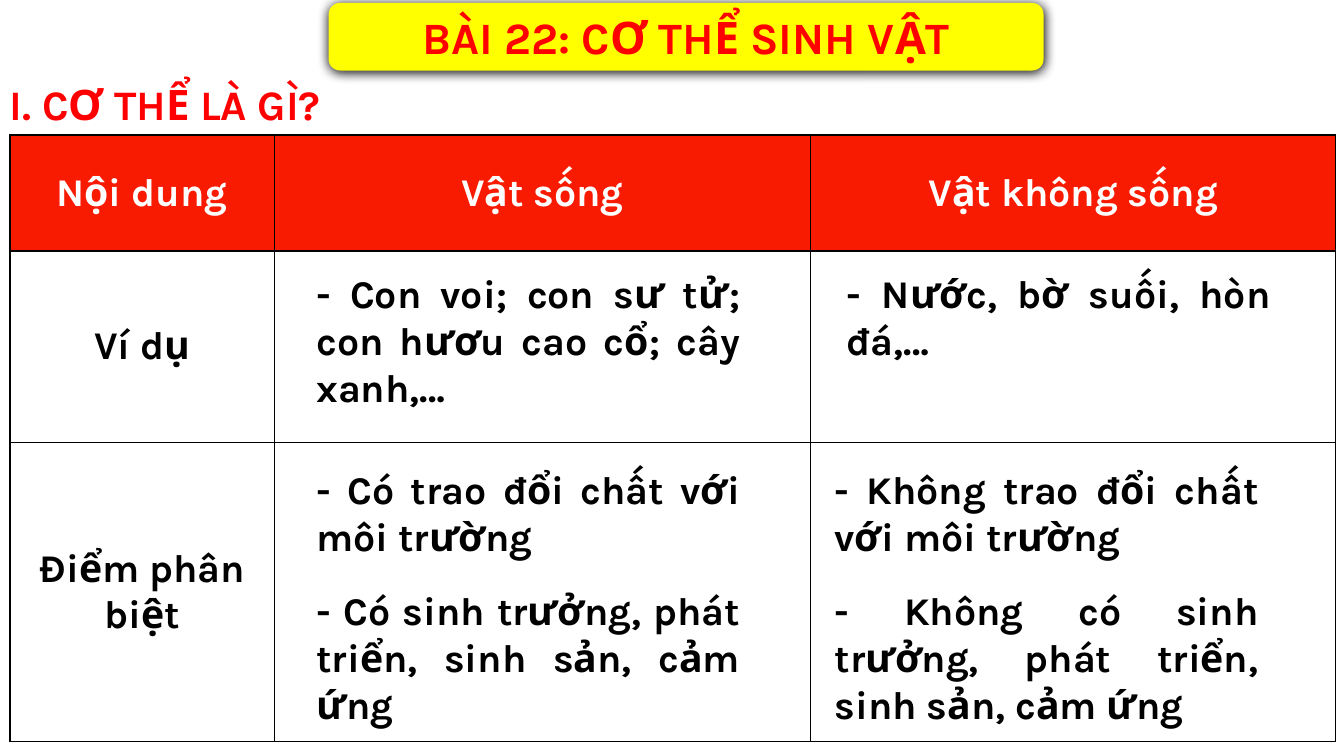
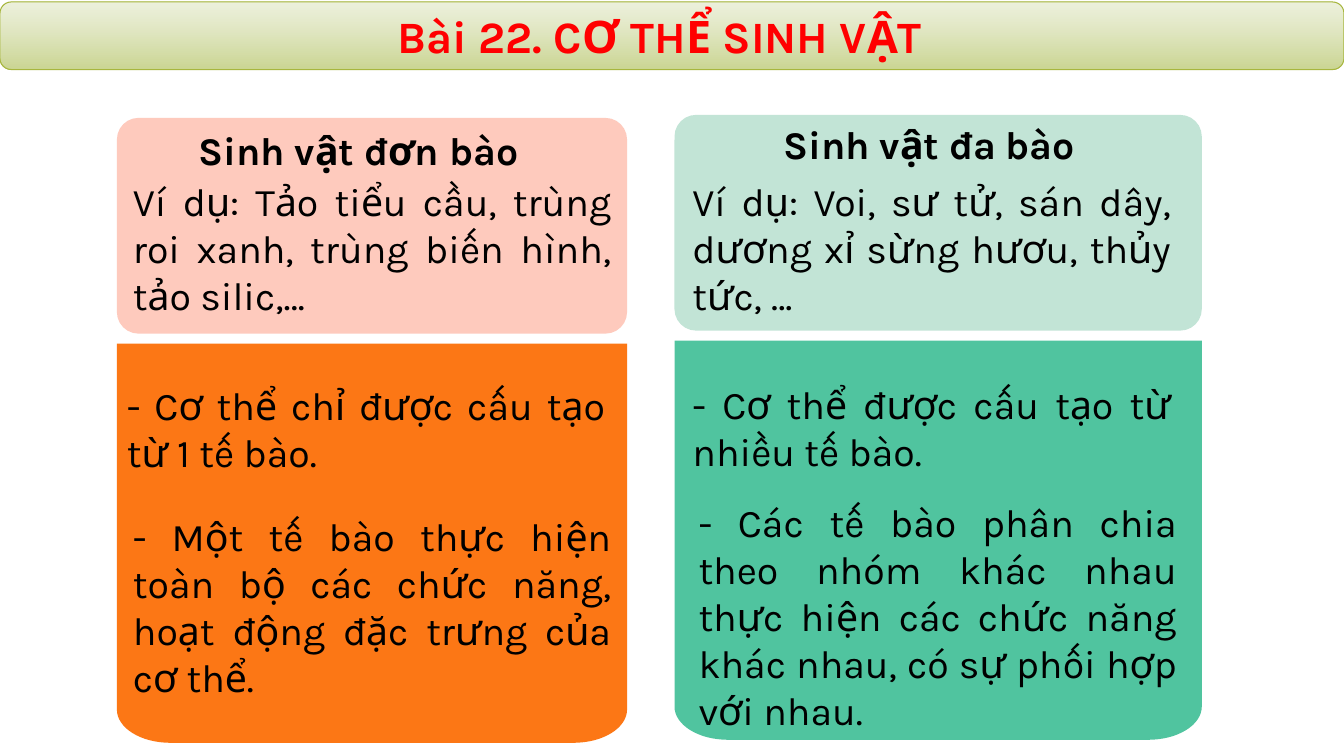
import math
from dataclasses import dataclass

from lxml import etree
from pptx import Presentation
from pptx import util as u
from pptx.dml.color import RGBColor
from pptx.enum import shapes, text
from pptx.oxml.ns import qn


@dataclass(frozen=True)
class Theme:
    font: str = "Karla"
    title_size: int = 32
    heading_size: int = 30
    body_size: int = 28
    red: str = "FF0000"
    yellow: str = "FFFF00"
    black: str = "000000"
    white: str = "FFFFFF"
    table_header: str = "F81B02"
    banner_top: str = "E2E8C6"
    banner_bottom: str = "C6D289"
    banner_line: str = "A7B63E"
    pink: str = "FECABD"
    orange: str = "FC7715"
    mint: str = "C2E4D6"
    green: str = "50C49F"


THEME = Theme()
CENTER = text.PP_ALIGN.CENTER
JUSTIFY = text.PP_ALIGN.JUSTIFY


def add_node(parent, tag, **attributes):
    values = {name: str(value) for name, value in attributes.items()}
    return etree.SubElement(parent, qn(tag), values)


class Deck:
    def __init__(self, theme):
        self.theme = theme
        self.presentation = Presentation()
        self.presentation.slide_width = u.Inches(13.33)
        self.presentation.slide_height = u.Inches(7.5)
        self.slide = None

    def new_slide(self):
        layout = self.presentation.slide_layouts[6]
        self.slide = self.presentation.slides.add_slide(layout)

    def set_text(self, text_frame, words, size, color, bold, align=None):
        text_frame.text = words
        paragraph = text_frame.paragraphs[0]
        paragraph.alignment = align
        for run in paragraph.runs:
            run.font.name = self.theme.font
            run.font.size = u.Pt(size)
            run.font.bold = bold
            run.font.color.rgb = RGBColor.from_string(color)

    def paint(self, shape, color):
        shape.shadow.inherit = False
        shape.fill.solid()
        shape.fill.fore_color.rgb = RGBColor.from_string(color)
        shape.line.fill.background()

    def rounded_box(self, left, top, width, height, color, parent=None):
        shape = (parent or self.slide).shapes.add_shape(
            shapes.MSO_SHAPE.ROUNDED_RECTANGLE,
            u.Inches(left), u.Inches(top), u.Inches(width), u.Inches(height))
        self.paint(shape, color)
        return shape

    def title(self, left, top, width, words):
        shape = self.rounded_box(left, top, width, 0.67, self.theme.yellow)
        shape.text_frame.vertical_anchor = text.MSO_ANCHOR.MIDDLE
        self.set_text(shape.text_frame, words, self.theme.title_size,
                      self.theme.red, True, CENTER)
        return shape

    def cast_shadow(self, shape):
        effects = shape._element.spPr.find(qn("a:effectLst"))
        shadow = add_node(effects, "a:outerShdw", blurRad=u.Pt(8.5),
                          dist=u.Pt(1), dir=5400000, algn="t", rotWithShape=0)
        add_node(shadow, "a:srgbClr", val=self.theme.black)

    def shade(self, shape, stops, line_color):
        shape.fill.gradient()
        shape.fill.gradient_angle = 270
        for stop, (color, _) in zip(shape.fill.gradient_stops, stops):
            stop.color.rgb = RGBColor.from_string(color)
        gradient = shape._element.spPr.find(qn("a:gradFill"))
        for node, (_, opacity) in zip(gradient.iter(qn("a:srgbClr")), stops):
            add_node(node, "a:alpha", val=opacity * 1000)
        shape.line.color.rgb = RGBColor.from_string(line_color)
        shape.line.width = u.Pt(0.75)

    def label(self, left, top, width, height, words, size=None, color=None,
              bold=True, align=None, parent=None):
        box = (parent or self.slide).shapes.add_textbox(
            u.Inches(left), u.Inches(top), u.Inches(width), u.Inches(height))
        box.text_frame.word_wrap = True
        box.text_frame.auto_size = text.MSO_AUTO_SIZE.SHAPE_TO_FIT_TEXT
        self.set_text(box.text_frame, words, size or self.theme.body_size,
                      color or self.theme.black, bold, align)

    def note(self, left, top, width, lines, words, bold=False):
        self.label(left, top, width, 0.1 + 0.47 * lines, words,
                   bold=bold, align=JUSTIFY)

    def table(self, left, top, columns, rows, content):
        frame = self.slide.shapes.add_table(
            len(rows), len(columns), u.Inches(left), u.Inches(top),
            u.Inches(sum(columns)), u.Inches(sum(rows)))
        table = frame.table
        for column, width in zip(table.columns, columns):
            column.width = u.Inches(width)
        for row, height in zip(table.rows, rows):
            row.height = u.Inches(height)
        for row_index, row_words in enumerate(content):
            header = row_index == 0
            fill = self.theme.table_header if header else self.theme.white
            color = self.theme.white if header else self.theme.black
            for column_index, words in enumerate(row_words):
                self.cell(table.cell(row_index, column_index),
                          words, fill, color)

    def cell(self, cell, words, fill, color):
        properties = cell._tc.get_or_add_tcPr()
        for side in ("a:lnL", "a:lnR", "a:lnT", "a:lnB"):
            border = add_node(properties, side, w=u.Pt(1))
            solid = add_node(border, "a:solidFill")
            add_node(solid, "a:srgbClr", val=self.theme.black)
        cell.fill.solid()
        cell.fill.fore_color.rgb = RGBColor.from_string(fill)
        if words:
            cell.vertical_anchor = text.MSO_ANCHOR.MIDDLE
            self.set_text(cell.text_frame, words, self.theme.body_size,
                          color, True, CENTER)

    def panel(self, left, top, width, height, color):
        radius_x, radius_y, steps = 0.53, 0.33, 16
        right, bottom = left + width, top + height
        points = [(right, top)]
        for start, center_x in ((0, right - radius_x), (90, left + radius_x)):
            for step in range(steps + 1):
                angle = math.radians(start + 90 * step / steps)
                points.append((center_x + radius_x * math.cos(angle),
                               bottom - radius_y + radius_y * math.sin(angle)))
        builder = self.slide.shapes.build_freeform(
            u.Inches(left), u.Inches(top))
        builder.add_line_segments(
            [(u.Inches(x), u.Inches(y)) for x, y in points], close=True)
        self.paint(builder.convert_to_shape(), color)

    def card(self, left, top, width, head_color, body_color,
             heading, heading_left, heading_top):
        self.panel(left, top + 2.24, width, 3.96, body_color)
        group = self.slide.shapes.add_group_shape()
        head = self.rounded_box(left, top, width, 2.14, head_color, group)
        head.adjustments[0] = 0.1
        self.label(heading_left, heading_top, 3.74, 0.57, heading,
                   parent=group)


def living_things_slide(deck):
    deck.new_slide()
    title = deck.title(3.26, 0.03, 7.09, "BÀI 22: CƠ THỂ SINH VẬT")
    deck.cast_shadow(title)
    deck.label(0, 0.73, 3.87, 0.61, "I. CƠ THỂ LÀ GÌ?",
               THEME.heading_size, THEME.red)
    deck.table(0.1, 1.34, (2.62, 5.32, 5.21), (1.15, 1.9, 2.97), (
        ("Nội dung", "Vật sống", "Vật không sống"),
        ("Ví dụ", "", ""),
        ("Điểm phân biệt", "", "")))
    answers = (
        (3.04, 2.62, 3, "- Con voi; con sư tử; con hươu cao cổ; cây xanh,…"),
        (8.3, 2.62, 2, "- Nước, bờ suối, hòn đá,…"),
        (3.04, 4.57, 2, "- Có trao đổi chất với môi trường"),
        (8.18, 4.57, 2, "- Không trao đổi chất với môi trường"),
        (3.04, 5.77, 3, "- Có sinh trưởng, phát triển, sinh sản, cảm ứng"),
        (8.18, 5.77, 3,
         "- Không có sinh trưởng, phát triển, sinh sản, cảm ứng"))
    for left, top, lines, words in answers:
        deck.note(left, top, 4.4, lines, words, bold=True)


def cell_count_slide(deck):
    deck.new_slide()
    deck.card(1.16, 1.17, 5.06, THEME.pink, THEME.orange,
              "Sinh vật đơn bào", 1.87, 1.2)
    deck.card(6.69, 1.14, 5.23, THEME.mint, THEME.green,
              "Sinh vật đa bào", 7.67, 1.14)
    facts = (
        (1.22, 1.71, 3, "Ví dụ: Tảo tiểu cầu, trùng roi xanh, "
                        "trùng biến hình, tảo silic,…"),
        (6.77, 1.71, 3, "Ví dụ: Voi, sư tử, sán dây, "
                        "dương xỉ sừng hươu, thủy tức, …"),
        (1.16, 3.73, 2, "- Cơ thể chỉ được cấu tạo từ 1 tế bào."),
        (6.77, 3.72, 2, "- Cơ thể được cấu tạo từ nhiều tế bào."),
        (1.22, 5.03, 4, "- Một tế bào thực hiện toàn bộ các chức năng, "
                        "hoạt động đặc trưng của cơ thể."),
        (6.83, 4.89, 5, "- Các tế bào phân chia theo nhóm khác nhau "
                        "thực hiện các chức năng khác nhau, "
                        "có sự phối hợp với nhau."))
    for left, top, lines, words in facts:
        deck.note(left, top, 4.94, lines, words)
    title = deck.title(0, 0.02, 13.33, "Bài 22. CƠ THỂ SINH VẬT")
    title.text_frame.margin_right = u.Inches(0.34)
    deck.shade(title, ((THEME.banner_top, 60), (THEME.banner_bottom, 92)),
               THEME.banner_line)


def main():
    deck = Deck(THEME)
    living_things_slide(deck)
    cell_count_slide(deck)
    deck.presentation.save("out.pptx")


if __name__ == "__main__":
    main()
